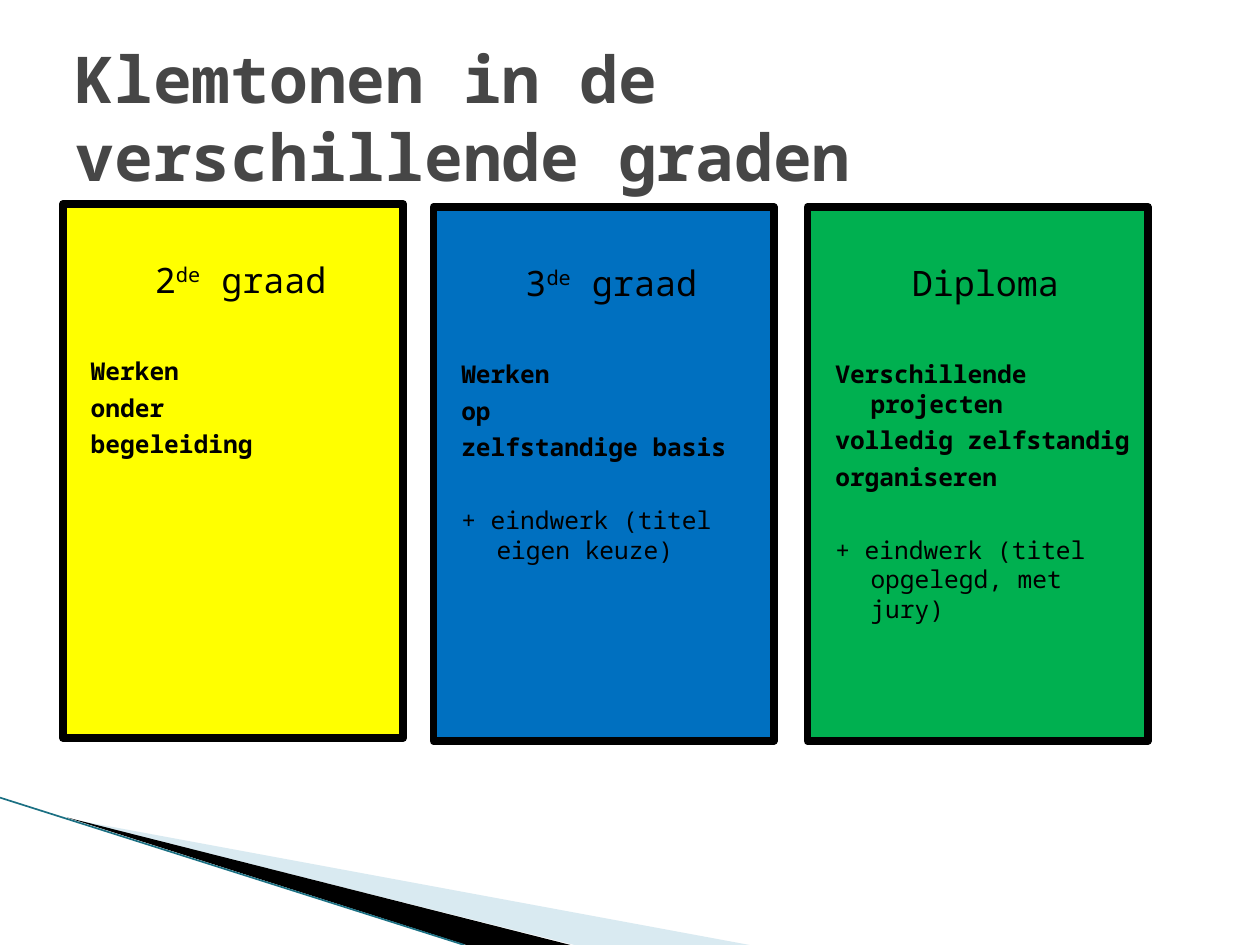
from lxml import etree
from pptx import Presentation
from pptx.dml.color import RGBColor
from pptx.enum.shapes import MSO_CONNECTOR, MSO_SHAPE
from pptx.enum.text import MSO_ANCHOR, PP_ALIGN
from pptx.oxml.ns import qn
from pptx.util import Cm, Pt

LEFT, CENTER = PP_ALIGN.LEFT, PP_ALIGN.CENTER
TOP, MIDDLE = MSO_ANCHOR.TOP, MSO_ANCHOR.MIDDLE
RECTANGLE, STRAIGHT = MSO_SHAPE.RECTANGLE, MSO_CONNECTOR.STRAIGHT

# Content
TITLE = "Klemtonen in de verschillende graden"
CARDS = [
    {"left": 1.27, "top": 4.11, "fill": "FFFF00",
     "heading": ("2", "de", " graad"),
     "focus": ["Werken", "onder", "begeleiding"], "extra": None},
    {"left": 8.74, "top": 4.17, "fill": "0070C0",
     "heading": ("3", "de", " graad"),
     "focus": ["Werken", "op", "zelfstandige basis"],
     "extra": "+ eindwerk (titel eigen keuze)"},
    {"left": 16.28, "top": 4.17, "fill": "00B050",
     "heading": ("Diploma", "", ""),
     "focus": ["Verschillende projecten", "volledig zelfstandig", "organiseren"],
     "extra": "+ eindwerk (titel opgelegd, met jury)"},
]
CARD_WIDTH, CARD_HEIGHT = 6.86, 10.77

# Corner decoration: outline in cm, fill, opacity in percent
WEDGES = [
    ([(1.4, 16.51), (15.11, 19.05), (11.58, 19.05)], "A0CBDC", 40),
    ([(1.35, 16.48), (11.5, 19.05), (9.4, 19.05)], "000000", 100),
]
EDGE = (0, 16.08, 9.36, 19.05)

THEME = {
    "font": "Noto Sans Mono", "title": "464646", "ink": "000000", "edge": "1B7083",
    "title_size": 36.9, "heading_size": 20, "body_size": 14,
    "border": 4.33, "edge_width": 0.95,
}


def rgb(code):
    return RGBColor.from_string(code)


def style(paragraph, size, color, bold=False):
    font = paragraph.font
    font.name, font.size, font.bold = THEME["font"], Pt(size), bold
    font.color.rgb = rgb(color)


def style_card_line(paragraph, align, size, space_before, bold=False):
    paragraph.alignment = align
    paragraph.space_before = Pt(space_before)
    properties = paragraph._p.get_or_add_pPr()
    properties.set("marL", str(Cm(1.02)))
    properties.set("indent", str(Cm(-0.71)))
    style(paragraph, size, THEME["ink"], bold)


def add_wedge(shapes, points, color, opacity):
    corners = [(Cm(x), Cm(y)) for x, y in points]
    builder = shapes.build_freeform(*corners[0])
    builder.add_line_segments(corners[1:], close=True)
    wedge = builder.convert_to_shape()
    wedge.shadow.inherit = False
    wedge.line.fill.background()
    wedge.fill.solid()
    wedge.fill.fore_color.rgb = rgb(color)
    if opacity < 100:
        color_node = wedge._element.spPr.find(qn("a:solidFill"))[0]
        etree.SubElement(color_node, qn("a:alpha")).set("val", str(opacity * 1000))


def add_card(shapes, card):
    box = shapes.add_shape(RECTANGLE, Cm(card["left"]), Cm(card["top"]),
                           Cm(CARD_WIDTH), Cm(CARD_HEIGHT))
    box.shadow.inherit = False
    box.fill.solid()
    box.fill.fore_color.rgb = rgb(card["fill"])
    box.line.color.rgb = rgb(THEME["ink"])
    box.line.width = Pt(THEME["border"])
    frame = box.text_frame
    frame.word_wrap = True
    frame.vertical_anchor = TOP
    frame.margin_top = Cm(1.1)

    # Heading with a raised ordinal ending
    heading = frame.paragraphs[0]
    style_card_line(heading, CENTER, THEME["heading_size"], 0)
    number, ordinal, rest = card["heading"]
    heading.add_run().text = number
    if ordinal:
        raised = heading.add_run()
        raised.text = ordinal
        raised._r.get_or_add_rPr().set("baseline", "30000")
        heading.add_run().text = rest

    # Focus in bold, then the final project
    lines = [(text, 4 if i else 32, True) for i, text in enumerate(card["focus"])]
    if card["extra"]:
        lines.append((card["extra"], 25, False))
    for text, space_before, bold in lines:
        line = frame.add_paragraph()
        line.text = text
        style_card_line(line, LEFT, THEME["body_size"], space_before, bold)


def main():
    deck = Presentation()
    deck.slide_width, deck.slide_height = Cm(25.4), Cm(19.05)
    slide = deck.slides.add_slide(deck.slide_layouts[5])
    shapes = slide.shapes

    # Corner decoration
    for wedge in WEDGES:
        add_wedge(shapes, *wedge)
    edge = shapes.add_connector(STRAIGHT, *map(Cm, EDGE))
    edge.line.color.rgb = rgb(THEME["edge"])
    edge.line.width = Pt(THEME["edge_width"])
    etree.SubElement(edge._element.spPr, qn("a:effectLst"))

    # Title
    title = shapes.title
    title.left, title.top, title.width, title.height = map(Cm, (1.27, 0.76, 22.86, 3.18))
    title.text_frame.text = TITLE
    title.text_frame.vertical_anchor = MIDDLE
    title_line = title.text_frame.paragraphs[0]
    title_line.alignment = LEFT
    style(title_line, THEME["title_size"], THEME["title"], bold=True)

    # Cards
    for card in CARDS:
        add_card(shapes, card)

    deck.save("out.pptx")


if __name__ == "__main__":
    main()
